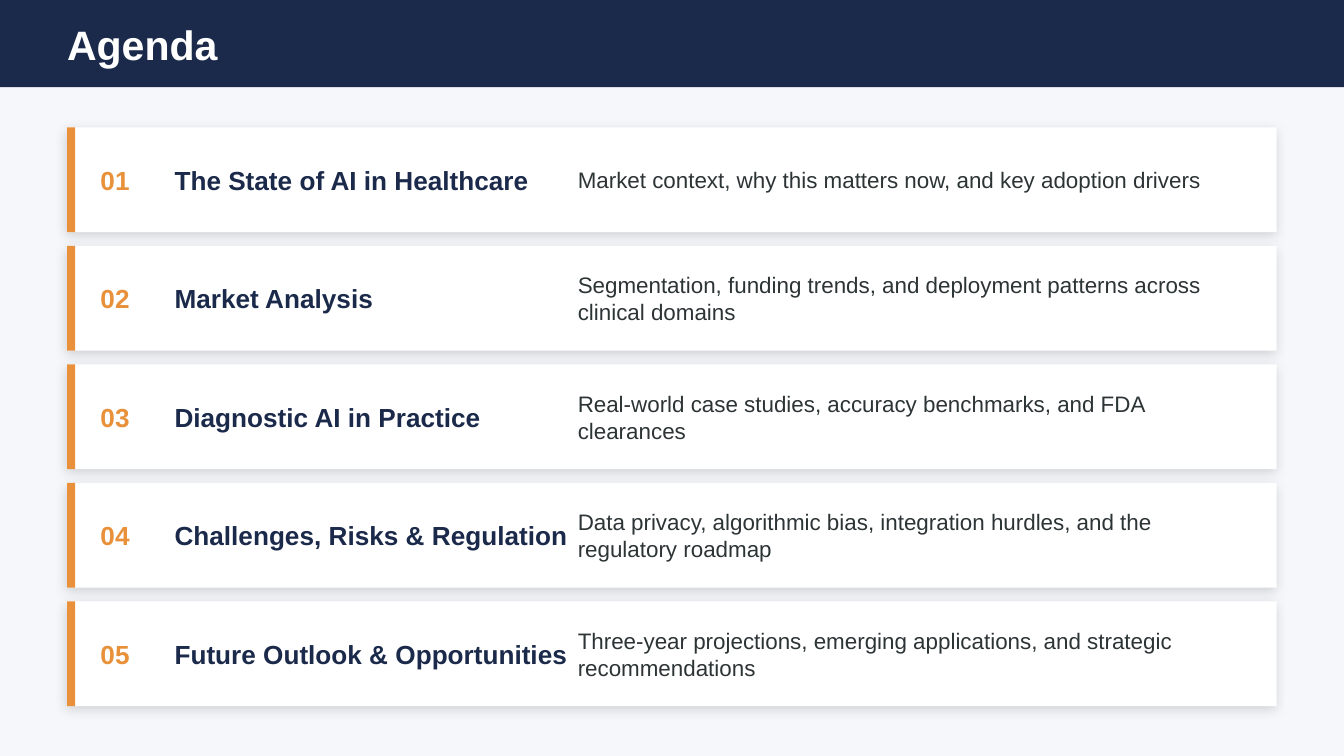
from lxml.etree import SubElement
from pptx import Presentation
from pptx.dml.color import RGBColor
from pptx.enum.shapes import MSO_SHAPE
from pptx.enum.text import MSO_ANCHOR
from pptx.oxml.ns import qn
from pptx.util import Cm, Pt

NAVY = RGBColor(0x1B, 0x2A, 0x4A)
ORANGE = RGBColor(0xE8, 0x91, 0x3A)
WHITE = RGBColor(0xFF, 0xFF, 0xFF)
INK = RGBColor(0x2D, 0x34, 0x36)
PALE = RGBColor(0xF5, 0xF7, 0xFA)

# Lengths in centimetres
SLIDE_W, SLIDE_H = 25.4, 14.29
MARGIN = 1.27
CONTENT_W = SLIDE_W - 2 * MARGIN
HEADER_H = 1.65
CARD_TOP, CARD_H, CARD_STEP = 2.41, 1.98, 2.24

AGENDA = [
    ("The State of AI in Healthcare",
     "Market context, why this matters now, and key adoption drivers"),
    ("Market Analysis",
     "Segmentation, funding trends, and deployment patterns across clinical domains"),
    ("Diagnostic AI in Practice",
     "Real-world case studies, accuracy benchmarks, and FDA clearances"),
    ("Challenges, Risks & Regulation",
     "Data privacy, algorithmic bias, integration hurdles, and the regulatory roadmap"),
    ("Future Outlook & Opportunities",
     "Three-year projections, emerging applications, and strategic recommendations"),
]


def add_rect(s, x, y, w, h, color):
    sp = s.shapes.add_shape(MSO_SHAPE.RECTANGLE, Cm(x), Cm(y), Cm(w), Cm(h))
    sp.shadow.inherit = False
    sp.fill.solid()
    sp.fill.fore_color.rgb = color
    sp.line.fill.background()
    return sp


def add_soft_shadow(sp):
    effects = sp._element.spPr.find(qn("a:effectLst"))
    shadow = SubElement(effects, qn("a:outerShdw"), blurRad=str(Pt(6)),
                        dist=str(Pt(2)), dir=str(135 * 60000),
                        algn="bl", rotWithShape="0")
    color = SubElement(shadow, qn("a:srgbClr"), val="000000")
    SubElement(color, qn("a:alpha"), val="15000")


def add_text(s, x, y, w, h, text, size, color, bold=True):
    tf = s.shapes.add_textbox(Cm(x), Cm(y), Cm(w), Cm(h)).text_frame
    tf.word_wrap = True
    tf.vertical_anchor = MSO_ANCHOR.MIDDLE
    tf.margin_left = tf.margin_right = tf.margin_top = tf.margin_bottom = 0
    p = tf.paragraphs[0]
    p.text = text
    p.font.name = "Arial"
    p.font.size = Pt(size)
    p.font.bold = bold
    p.font.color.rgb = color


def add_card(s, y, number, topic, summary):
    add_soft_shadow(add_rect(s, MARGIN, y, CONTENT_W, CARD_H, WHITE))
    add_rect(s, MARGIN, y, 0.15, CARD_H, ORANGE)
    add_text(s, 1.9, y, 1.27, CARD_H, f"{number:02d}", 14, ORANGE)
    add_text(s, 3.3, y, 7.62, CARD_H, topic, 14, NAVY)
    add_text(s, 10.92, y, 12.7, CARD_H, summary, 12, INK, bold=False)


def main():
    prs = Presentation()
    prs.slide_width, prs.slide_height = Cm(SLIDE_W), Cm(SLIDE_H)
    s = prs.slides.add_slide(prs.slide_layouts[6])
    s.background.fill.solid()
    s.background.fill.fore_color.rgb = PALE

    # Header band
    add_rect(s, 0, 0, SLIDE_W, HEADER_H, NAVY)
    add_text(s, MARGIN, 0, CONTENT_W, HEADER_H, "Agenda", 22, WHITE)

    # Agenda cards
    for i, (topic, summary) in enumerate(AGENDA):
        add_card(s, CARD_TOP + i * CARD_STEP, i + 1, topic, summary)

    prs.save("out.pptx")


if __name__ == "__main__":
    main()
